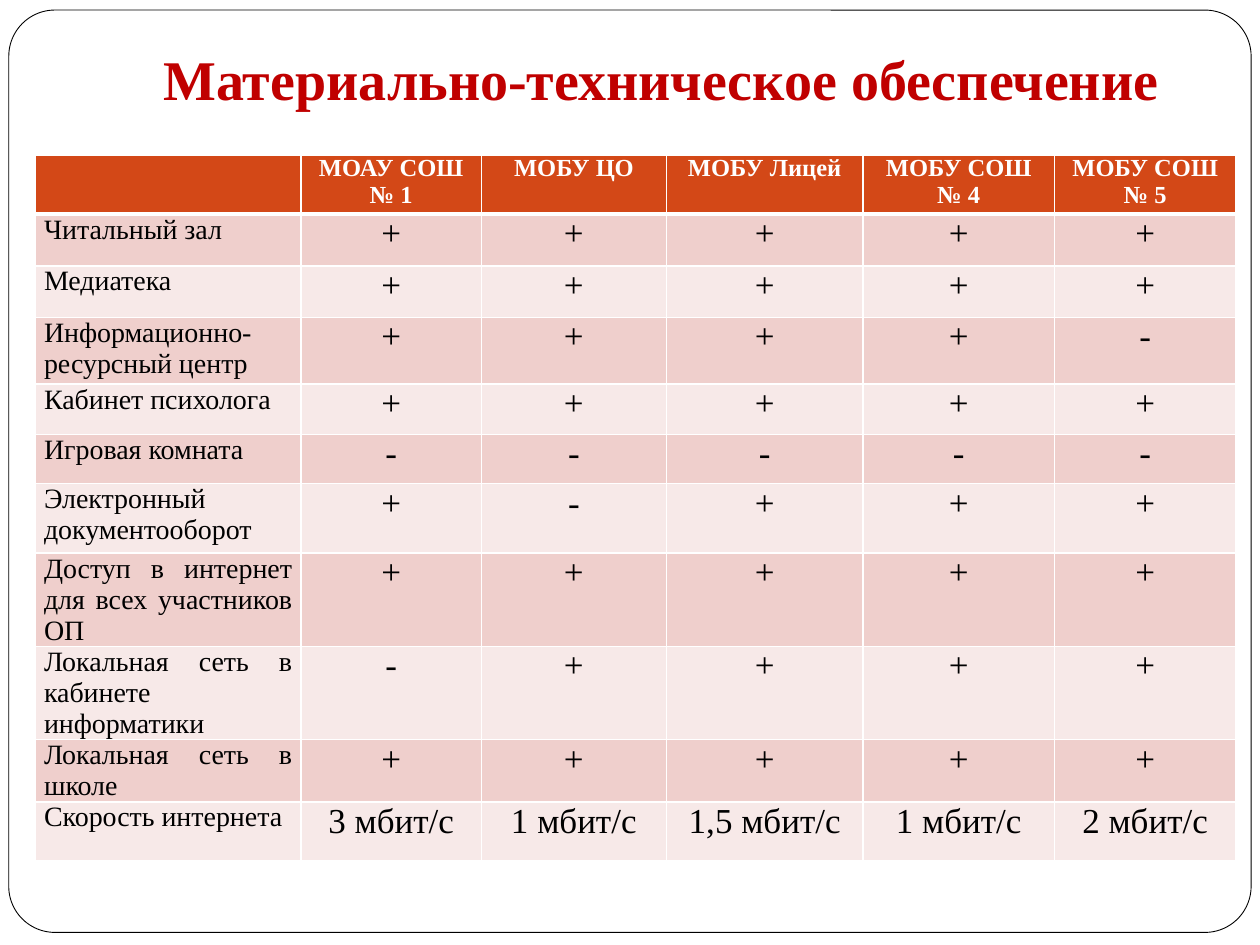
from lxml import etree
from pptx import Presentation
from pptx.dml.color import RGBColor
from pptx.enum import shapes, text
from pptx.oxml import ns
from pptx.util import Inches, Pt

TITLE = "Материально-техническое обеспечение"
SCHOOLS = ["МОАУ СОШ № 1", "МОБУ ЦО", "МОБУ Лицей", "МОБУ СОШ № 4", "МОБУ СОШ № 5"]
# Facility, row height in inches, value for each school
FACILITIES = [
    ("Читальный зал", 0.41, "+ + + + +".split()),
    ("Медиатека", 0.41, "+ + + + +".split()),
    ("Информационно-ресурсный центр", 0.53, "+ + + + -".split()),
    ("Кабинет психолога", 0.40, "+ + + + +".split()),
    ("Игровая комната", 0.39, "- - - - -".split()),
    ("Электронный документооборот", 0.55, "+ - + + +".split()),
    ("Доступ в интернет для всех участников ОП", 0.63, "+ + + + +".split()),
    ("Локальная сеть в кабинете информатики", 0.56, "- + + + +".split()),
    ("Локальная сеть в школе", 0.47, "+ + + + +".split()),
    ("Скорость интернета", 0.47,
     [f"{speed} мбит/с" for speed in ("3", "1", "1,5", "1", "2")]),
]
HEADER_HEIGHT = 0.47
COLUMN_WIDTHS = [2.11, 1.43, 1.47, 1.56, 1.52, 1.44]

THEME = {
    "font": "Times New Roman",
    "title": "C00000", "header": "D34817", "bands": ("EFCFCC", "F7E9E8"),
    "white": "FFFFFF", "black": "000000",
    "title_size": 32, "header_size": 14, "label_size": 16, "value_size": 20,
}


def color(name):
    return RGBColor.from_string(THEME.get(name, name))


def write(paragraph, words, size, ink, bold, align):
    paragraph.alignment = align
    run = paragraph.add_run()
    run.text = words
    run.font.name = THEME["font"]
    run.font.size = Pt(THEME[size])
    run.font.color.rgb = color(ink)
    run.font.bold = bold


def set_borders(cell, top, bottom):
    """Draw white cell edges; top and bottom widths are in points."""
    properties = cell._tc.get_or_add_tcPr()
    for index, (side, width) in enumerate(
            [("lnL", 1), ("lnR", 1), ("lnT", top), ("lnB", bottom)]):
        line = etree.Element(ns.qn(f"a:{side}"), w=str(Pt(width)))
        fill = etree.SubElement(line, ns.qn("a:solidFill"))
        etree.SubElement(fill, ns.qn("a:srgbClr"), val=THEME["white"])
        properties.insert(index, line)


def add_frame(slide):
    frame = slide.shapes.add_shape(
        shapes.MSO_SHAPE.ROUNDED_RECTANGLE,
        Inches(0.07), Inches(0.08), Inches(9.86), Inches(7.32))
    frame.adjustments[0] = 0.05
    frame.shadow.inherit = False
    frame.fill.solid()
    frame.fill.fore_color.rgb = color("white")
    frame.line.color.rgb = color("black")
    frame.line.width = Pt(0.5)
    slide.shapes._spTree.insert(2, frame._element)  # behind the title


def add_title(slide):
    title = slide.shapes.title
    title.left, title.top = Inches(1), Inches(0.3)
    title.width, title.height = Inches(8.5), Inches(0.69)
    body = title.text_frame
    body.word_wrap = True
    body.auto_size = text.MSO_AUTO_SIZE.NONE
    body.vertical_anchor = text.MSO_ANCHOR.BOTTOM
    body.margin_left = body.margin_right = body.margin_bottom = Inches(0.1)
    body.margin_top = Inches(0.05)
    write(body.paragraphs[0], TITLE, "title_size", "title", True, text.PP_ALIGN.CENTER)


def add_facilities_table(slide):
    rows = [["", *SCHOOLS]] + [[label, *values] for label, _, values in FACILITIES]
    heights = [HEADER_HEIGHT] + [height for _, height, _ in FACILITIES]
    holder = slide.shapes.add_table(
        len(rows), len(COLUMN_WIDTHS), Inches(0.28), Inches(1.23),
        Inches(sum(COLUMN_WIDTHS)), Inches(sum(heights)))
    table = holder.table
    for column, width in zip(table.columns, COLUMN_WIDTHS):
        column.width = Inches(width)
    for row_index, (row, height) in enumerate(zip(rows, heights)):
        table.rows[row_index].height = Inches(height)
        is_header = row_index == 0
        background = "header" if is_header else THEME["bands"][(row_index - 1) % 2]
        for column_index, words in enumerate(row):
            cell = table.cell(row_index, column_index)
            cell.fill.solid()
            cell.fill.fore_color.rgb = color(background)
            set_borders(cell, top=3 if row_index == 1 else 1, bottom=3 if is_header else 1)
            cell.margin_left = cell.margin_right = Inches(0.07)
            cell.margin_top = cell.margin_bottom = 0
            if not words:
                continue
            is_label = column_index == 0
            size = "header_size" if is_header else "label_size" if is_label else "value_size"
            write(cell.text_frame.paragraphs[0], words, size,
                  "white" if is_header else "black", is_header,
                  text.PP_ALIGN.JUSTIFY if is_label else text.PP_ALIGN.CENTER)
    holder.height = Inches(5.78)


def main():
    presentation = Presentation()
    presentation.slide_width, presentation.slide_height = Inches(10), Inches(7.5)
    slide = presentation.slides.add_slide(presentation.slide_layouts.get_by_name("Title Only"))
    add_frame(slide)
    add_title(slide)
    add_facilities_table(slide)
    presentation.save("out.pptx")


if __name__ == "__main__":
    main()
